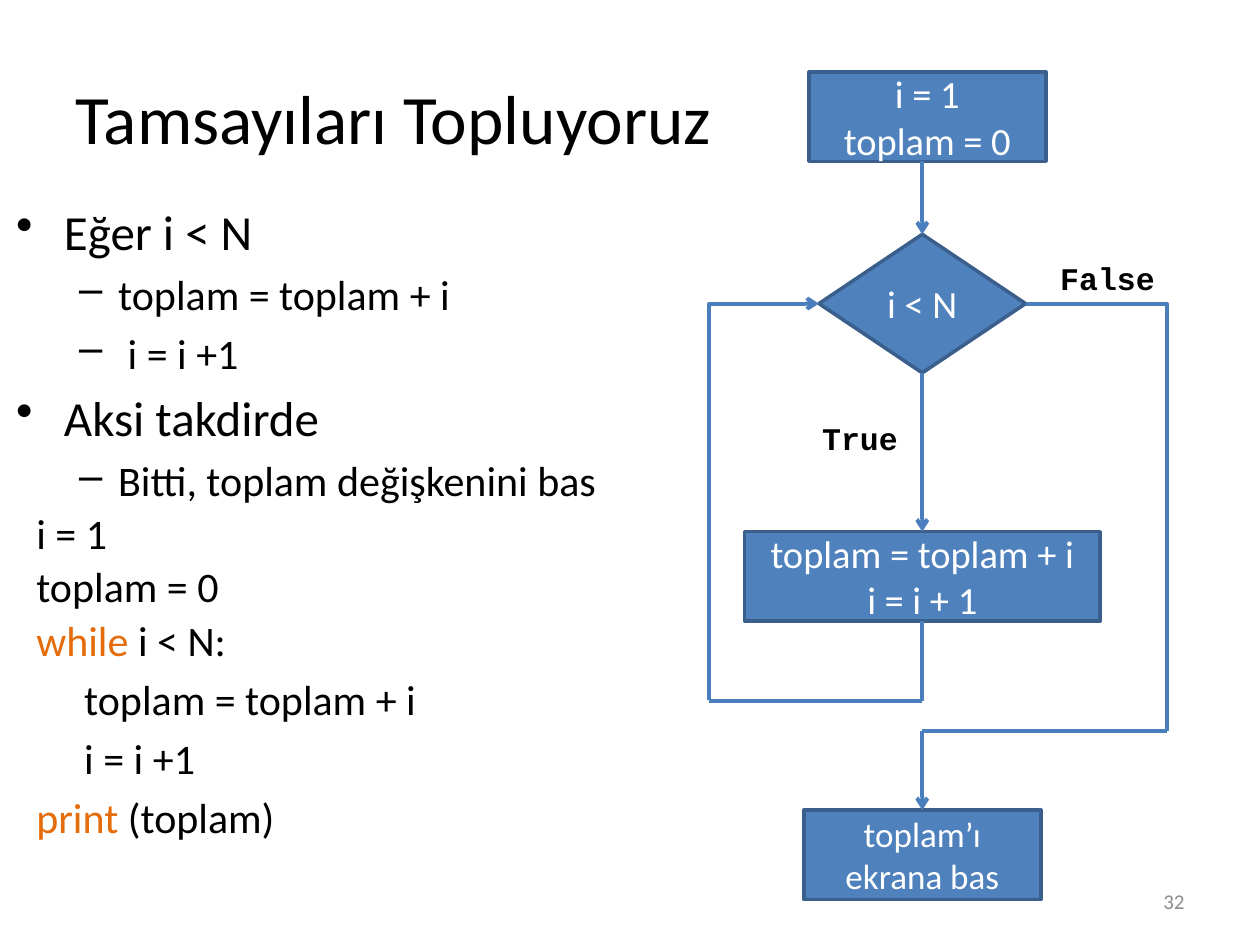
"""Build a slide that explains summing integers with a while loop and its flowchart."""
from lxml import etree
from pptx import Presentation
from pptx import util as u
from pptx.dml.color import RGBColor
from pptx.enum import shapes, text
from pptx.oxml import ns

BLACK = RGBColor(0x00, 0x00, 0x00)
WHITE = RGBColor(0xFF, 0xFF, 0xFF)
GREY = RGBColor(0x8C, 0x8C, 0x8C)
ORANGE = RGBColor(0xE4, 0x6C, 0x0A)
BLUE = RGBColor(0x4F, 0x81, 0xBD)
EDGE = RGBColor(0x3A, 0x5F, 0x8C)
ARROW = RGBColor(0x4B, 0x7E, 0xBC)

TITLE = "Tamsayıları Topluyoruz"
STEPS = [
    (0, "Eğer i < N"),
    (1, "toplam = toplam + i"),
    (1, " i = i +1"),
    (0, "Aksi takdirde"),
    (1, "Bitti, toplam değişkenini bas"),
]
STEP_STYLES = [("•", 28, 0.38, -0.38), ("–", 24, 0.81, -0.31)]
CODE = [
    (0, 0.9, "", "i = 1"),
    (0, 0.9, "", "toplam = 0"),
    (0, 0.9, "while", " i < N:"),
    (0.38, 1, "", "toplam = toplam + i"),
    (0.38, 1, "", "i = i +1"),
    (0, 1, "print ", "(toplam)"),
]
PROCESS = shapes.MSO_SHAPE.FLOWCHART_PROCESS
DECISION = shapes.MSO_SHAPE.FLOWCHART_DECISION
NODES = {
    "start": (PROCESS, 6.42, 0.57, 1.88, 0.71, 22, "i = 1\ntoplam = 0"),
    "test": (DECISION, 6.5, 1.86, 1.64, 1.1, 22, "i < N"),
    "body": (PROCESS, 5.91, 4.22, 2.82, 0.71, 22, "toplam = toplam + i\ni = i + 1"),
    "end": (PROCESS, 6.38, 6.43, 1.88, 0.71, 20, "toplam’ı ekrana bas"),
}
BRANCHES = [("False", 8.31, 2.01, 0.96), ("True", 6.42, 3.28, 0.81)]
AXIS, LOOP_X, EXIT_X = 7.32, 5.63, 9.26
TEST_Y, LOOP_Y, EXIT_Y = 2.41, 5.56, 5.8
LINES = [
    ((AXIS, 1.28), (AXIS, 1.86), None, "test", True),
    ((AXIS, 2.96), (AXIS, 4.22), "test", "body", True),
    ((AXIS, 4.93), (AXIS, LOOP_Y), "body", None, False),
    ((AXIS, LOOP_Y), (LOOP_X, LOOP_Y), None, None, False),
    ((EXIT_X, EXIT_Y), (AXIS, EXIT_Y), None, None, False),
    ((AXIS, EXIT_Y), (AXIS, 6.43), None, "end", True),
]


def style(para, size, color, font="Calibri", bold=False):
    for span in para.runs:
        span.font.size = u.Pt(size)
        span.font.name = font
        span.font.bold = bold
        span.font.color.rgb = color


def add_text(page, left, top, width, height, wrap=True):
    box = page.shapes.add_textbox(*map(u.Inches, (left, top, width, height)))
    box.text_frame.word_wrap = wrap
    return box.text_frame


def next_para(frame, index):
    return frame.add_paragraph() if index else frame.paragraphs[0]


def indent(para, margin, first=0, bullet=None):
    props = para._p.get_or_add_pPr()
    props.set("marL", str(u.Inches(margin)))
    props.set("indent", str(u.Inches(first)))
    if bullet:
        etree.SubElement(props, ns.qn("a:buChar"), char=bullet)


def add_steps(page):
    frame = add_text(page, 0.03, 1.55, 4.93, 2.47)
    for index, (level, words) in enumerate(STEPS):
        bullet, size, margin, first = STEP_STYLES[level]
        para = next_para(frame, index)
        para.text = words
        para.level = level
        para.space_before = u.Pt(size * 0.2)
        indent(para, margin, first, bullet)
        style(para, size, BLACK)


def add_code(page):
    frame = add_text(page, 0.19, 4.02, 4.93, 3.11)
    for index, (margin, spacing, keyword, rest) in enumerate(CODE):
        para = next_para(frame, index)
        for part in filter(None, (keyword, rest)):
            para.add_run().text = part
        para.space_before = u.Pt(4.8)
        para.line_spacing = spacing
        indent(para, margin)
        style(para, 24, BLACK)
        if keyword:
            para.runs[0].font.color.rgb = ORANGE


def add_node(page, kind, left, top, width, height, size, words):
    node = page.shapes.add_shape(kind, *map(u.Inches, (left, top, width, height)))
    node.shadow.inherit = False
    node.fill.solid()
    node.fill.fore_color.rgb = BLUE
    node.line.color.rgb = EDGE
    node.line.width = u.Pt(2)
    frame = node.text_frame
    frame.text = words
    frame.word_wrap = True
    frame.vertical_anchor = text.MSO_ANCHOR.MIDDLE
    for para in frame.paragraphs:
        para.alignment = text.PP_ALIGN.CENTER
        style(para, size, WHITE)
    return node


def add_line(page, start, end, arrow=False, bent=False):
    kind = shapes.MSO_CONNECTOR.ELBOW if bent else shapes.MSO_CONNECTOR.STRAIGHT
    line = page.shapes.add_connector(kind, *map(u.Inches, start + end))
    line.line.color.rgb = ARROW
    line.line.width = u.Pt(2.25)
    props = line._element.spPr
    if bent:
        props.find(ns.qn("a:prstGeom")).set("prst", "bentConnector2")
    if arrow:
        etree.SubElement(line.line._get_or_add_ln(), ns.qn("a:tailEnd"), type="arrow")
    etree.SubElement(props, ns.qn("a:effectLst"))
    return line


def add_flowchart(page):
    nodes = {name: add_node(page, *node) for name, node in NODES.items()}
    for start, end, source, target, arrow in LINES:
        line = add_line(page, start, end, arrow)
        if source:
            line.begin_connect(nodes[source], 2)
        if target:
            line.end_connect(nodes[target], 0)
    add_line(page, (8.14, TEST_Y), (EXIT_X, EXIT_Y), bent=True)
    mid_x, mid_y = (LOOP_X + 6.5) / 2, (TEST_Y + LOOP_Y) / 2
    half_w, half_h = (LOOP_Y - TEST_Y) / 2, (6.5 - LOOP_X) / 2
    back = add_line(page, (mid_x + half_w, mid_y + half_h),
                    (mid_x - half_w, mid_y - half_h), arrow=True, bent=True)
    back._element.spPr.find(ns.qn("a:xfrm")).set("rot", str(90 * 60000))
    for words, left, top, width in BRANCHES:
        para = add_text(page, left, top, width, 0.4, wrap=False).paragraphs[0]
        para.text = words
        para.alignment = text.PP_ALIGN.CENTER
        style(para, 18, BLACK, "Courier New", True)


def main():
    deck = Presentation()
    deck.slide_width, deck.slide_height = u.Inches(10), u.Inches(7.5)
    page = deck.slides.add_slide(deck.slide_layouts[5])
    title = page.shapes.title
    title.left, title.top, title.width, title.height = map(u.Inches, (0.5, 0.3, 5.72, 1.25))
    title.text_frame.text = TITLE
    title.text_frame.vertical_anchor = text.MSO_ANCHOR.MIDDLE
    title.text_frame.paragraphs[0].alignment = text.PP_ALIGN.LEFT
    style(title.text_frame.paragraphs[0], 39.6, BLACK)
    add_steps(page)
    add_code(page)
    add_flowchart(page)
    number = add_text(page, 7.17, 6.95, 2.33, 0.4)
    number.text = "32"
    number.vertical_anchor = text.MSO_ANCHOR.MIDDLE
    number.paragraphs[0].alignment = text.PP_ALIGN.RIGHT
    style(number.paragraphs[0], 12, GREY)
    deck.save("out.pptx")


if __name__ == "__main__":
    main()
